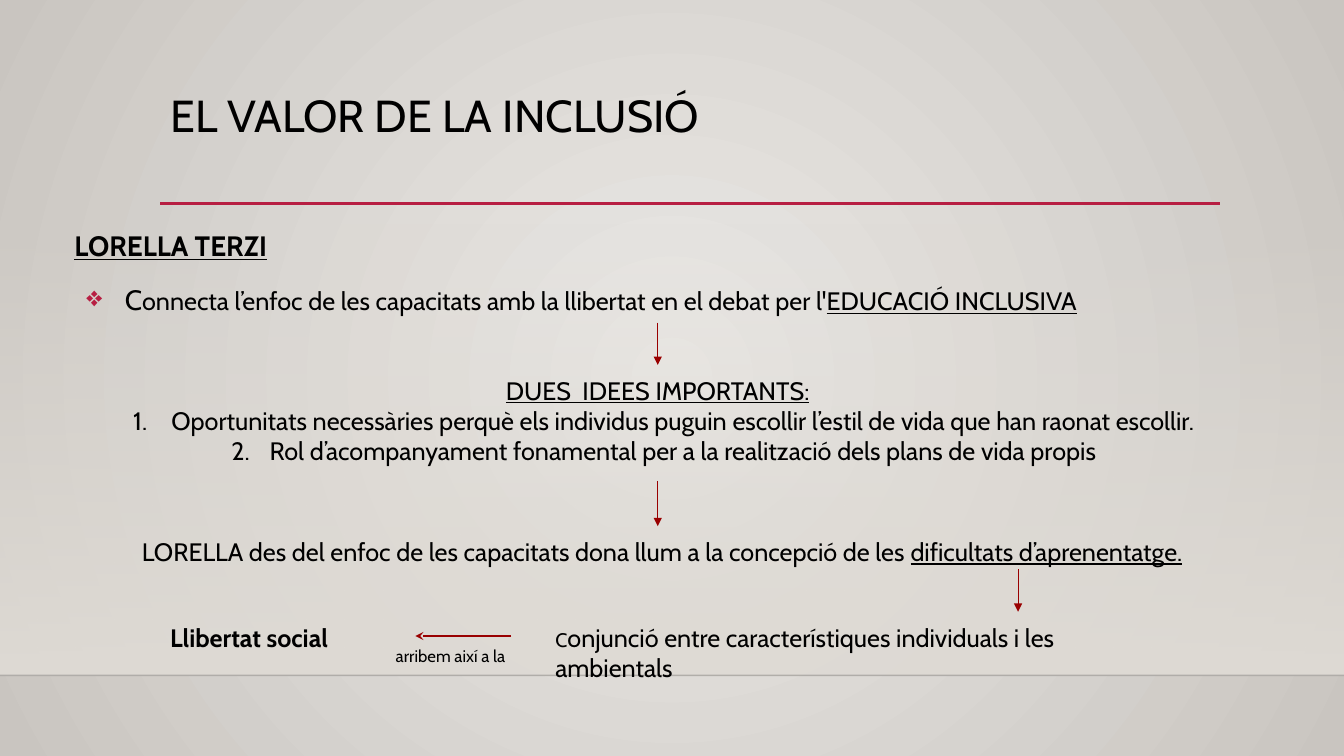
"""Build the slide on the value of inclusion."""
from dataclasses import dataclass
from typing import Optional

from lxml.etree import SubElement
from pptx import Presentation
from pptx.dml.color import RGBColor
from pptx.enum.shapes import MSO_CONNECTOR, MSO_SHAPE
from pptx.enum.text import MSO_ANCHOR, MSO_AUTO_SIZE, PP_ALIGN
from pptx.oxml.ns import qn
from pptx.util import Inches, Pt

COLORS = {
    "text": "000000", "accent": "B71E42", "arrow": "990000", "floor": "000001",
    "wall": "DFDBD5", "center": "EBE9E6", "edge": "C9C5C0",
}
FONT = "Cabin"
WIDTH, HEIGHT = Inches(13.33), Inches(7.5)
LEFT, RULE, FLOOR = 11.93, 26.93, 89.33
IDEAS_TOP, DIFFICULTY_TOP, RESULT_TOP, CAPTION_TOP = 48.27, 69.6, 80.93, 84.13


@dataclass(frozen=True)
class Area:
    """A rectangle in percent of the slide's width and height."""
    left: float
    top: float
    width: float
    height: float


@dataclass(frozen=True)
class Run:
    """A piece of text with one format."""
    text: str
    size: float = 18
    bold: bool = False
    underline: bool = False


@dataclass(frozen=True)
class Paragraph:
    """Runs that share a paragraph format."""
    runs: tuple[Run, ...]
    bullet: Optional[str] = None
    before: float = 0


@dataclass(frozen=True)
class TextBlock:
    """A named text box and its paragraphs."""
    name: str
    area: Area
    paragraphs: tuple[Paragraph, ...]
    centered: bool = False
    spacing: float = 1.0
    inset: float = 0.1


@dataclass(frozen=True)
class Line:
    """A straight line in percent, with optional joins to a text block."""
    start: tuple[float, float]
    end: tuple[float, float]
    color: str = "arrow"
    weight: float = 0.75
    head: Optional[str] = None
    opacity: int = 100
    begin_join: Optional[tuple[str, int]] = None
    end_join: Optional[tuple[str, int]] = None


BLOCKS = (
    TextBlock("author", Area(4.8, 28.67, 92.93, 67.6), (
        Paragraph((Run("LORELLA TERZI", 20, True, True),)),
        Paragraph((
            Run("C", 20),
            Run("onnecta l’enfoc de les capacitats amb la llibertat en el debat per l'"),
            Run("EDUCACIÓ INCLUSIVA", underline=True),
        ), "❖", 10),
    ), spacing=1.2, inset=0.05),
    TextBlock("ideas", Area(5.55, IDEAS_TOP, 86.78, 15.33), (
        Paragraph((Run("DUES  IDEES IMPORTANTS:", underline=True),)),
        Paragraph((Run("Oportunitats necessàries perquè els individus puguin escollir "
                       "l’estil de vida que han raonat escollir."),), "number"),
        Paragraph((Run("Rol d’acompanyament fonamental per a la realització "
                       "dels plans de vida propis"),), "number"),
    ), centered=True),
    TextBlock("difficulty", Area(9.83, DIFFICULTY_TOP, 86.78, 21.33), (
        Paragraph((
            Run("LORELLA des del enfoc de les capacitats dona llum a la concepció de les "),
            Run("dificultats d’aprenentatge.", underline=True),
        )),
    )),
    TextBlock("conjunction", Area(40.58, RESULT_TOP, 47.18, 9.73), (
        Paragraph((
            Run("C", 14),
            Run("onjunció entre característiques individuals i les ambientals"),
        )),
    )),
    TextBlock("freedom", Area(LEFT, RESULT_TOP, 15.3, 9.73), (
        Paragraph((Run("Llibertat social", bold=True),)),
    )),
    TextBlock("caption", Area(27.45, CAPTION_TOP, 12.15, 5.6), (
        Paragraph((Run("arribem així a la", 12),)),
    ), centered=True),
)

LINES = (
    Line((0, FLOOR), (100, FLOOR), "floor", 1, opacity=20),
    Line((LEFT, RULE), (90.75, RULE), "accent", 2.5),
    Line((48.94, 42.67), (48.94, IDEAS_TOP), head="triangle", end_join=("ideas", 0)),
    Line((48.94, 63.6), (48.94, DIFFICULTY_TOP), head="triangle", begin_join=("ideas", 2)),
    Line((75.75, 75.33), (75.75, RESULT_TOP), head="triangle"),
    Line((38.03, CAPTION_TOP), (30.9, CAPTION_TOP), head="stealth"),
)


def across(share: float) -> int:
    return round(WIDTH * share / 100)


def down(share: float) -> int:
    return round(HEIGHT * share / 100)


def bounds(area: Area) -> tuple[int, int, int, int]:
    return across(area.left), down(area.top), across(area.width), down(area.height)


def color(name: str) -> RGBColor:
    return RGBColor.from_string(COLORS[name])


def set_opacity(element, percent: int) -> None:
    SubElement(next(element.iter(qn("a:srgbClr"))), qn("a:alpha"), val=str(percent * 1000))


def set_gradient(fill, first: str, last: str):
    fill.gradient()
    for stop, name in zip(fill.gradient_stops, (first, last)):
        stop.color.rgb = color(name)


def add_bullet(paragraph, bullet: str) -> None:
    properties = paragraph._p.get_or_add_pPr()
    properties.set("marL", str(Inches(0.5)))
    properties.set("indent", str(Inches(-0.38)))
    tint = SubElement(properties, qn("a:buClr"))
    numbered = bullet == "number"
    SubElement(tint, qn("a:srgbClr"), val=COLORS["text" if numbered else "accent"])
    if numbered:
        SubElement(properties, qn("a:buAutoNum"), type="arabicPeriod")
    else:
        SubElement(properties, qn("a:buChar"), char=bullet)


def write_text(frame, paragraphs: tuple[Paragraph, ...], *, centered: bool = False,
               spacing: float = 1.0, inset: float = 0.1) -> None:
    frame.word_wrap = True
    frame.auto_size = MSO_AUTO_SIZE.NONE
    frame.vertical_anchor = MSO_ANCHOR.TOP
    frame.margin_left = frame.margin_right = Inches(0.1)
    frame.margin_top = frame.margin_bottom = Inches(inset)
    for index, item in enumerate(paragraphs):
        paragraph = frame.add_paragraph() if index else frame.paragraphs[0]
        if item.bullet:
            add_bullet(paragraph, item.bullet)
        paragraph.alignment = PP_ALIGN.CENTER if centered else PP_ALIGN.LEFT
        paragraph.line_spacing = spacing
        paragraph.space_before = Pt(item.before)
        for piece in item.runs:
            run = paragraph.add_run()
            run.text = piece.text
            run.font.name, run.font.size = FONT, Pt(piece.size)
            run.font.bold, run.font.underline = piece.bold, piece.underline
            run.font.color.rgb = color("text")


def add_line(slide, line: Line, boxes: dict) -> None:
    connector = slide.shapes.add_connector(
        MSO_CONNECTOR.STRAIGHT, across(line.start[0]), down(line.start[1]),
        across(line.end[0]), down(line.end[1]))
    connector.line.color.rgb = color(line.color)
    connector.line.width = Pt(line.weight)
    outline = connector.line._get_or_add_ln()
    if line.opacity < 100:
        set_opacity(outline, line.opacity)
    if line.head:
        SubElement(outline, qn("a:tailEnd"), type=line.head)
    SubElement(connector._element.spPr, qn("a:effectLst"))
    if line.begin_join:
        connector.begin_connect(boxes[line.begin_join[0]], line.begin_join[1])
    if line.end_join:
        connector.end_connect(boxes[line.end_join[0]], line.end_join[1])


def add_backdrop(slide) -> None:
    fill = slide.background.fill
    set_gradient(fill, "center", "edge")
    gradient = next(slide.background._cSld.iter(qn("a:gradFill")))
    gradient.remove(gradient.find(qn("a:lin")))
    shade = SubElement(gradient, qn("a:path"), path="circle")
    SubElement(shade, qn("a:fillToRect"), l="50000", t="50000", r="50000", b="50000")
    wall = slide.shapes.add_shape(MSO_SHAPE.RECTANGLE, *bounds(Area(0, 29.47, 100, 59.86)))
    wall.shadow.inherit = False
    wall.line.fill.background()
    set_gradient(wall.fill, "wall", "wall")
    wall.fill.gradient_angle = 270
    set_opacity(wall._element.spPr, 0)


def main() -> None:
    presentation = Presentation()
    presentation.slide_width, presentation.slide_height = WIDTH, HEIGHT
    slide = presentation.slides.add_slide(presentation.slide_layouts[5])
    add_backdrop(slide)
    title = slide.shapes.title
    title.left, title.top, title.width, title.height = bounds(Area(LEFT, 11.73, 78.75, 15.33))
    write_text(title.text_frame, (Paragraph((Run("EL VALOR DE LA INCLUSIÓ", 32),)),),
               spacing=0.9, inset=0.05)
    boxes = {}
    for block in BLOCKS:
        boxes[block.name] = slide.shapes.add_textbox(*bounds(block.area))
        write_text(boxes[block.name].text_frame, block.paragraphs, centered=block.centered,
                   spacing=block.spacing, inset=block.inset)
    for line in LINES:
        add_line(slide, line, boxes)
    presentation.save("out.pptx")


if __name__ == "__main__":
    main()
